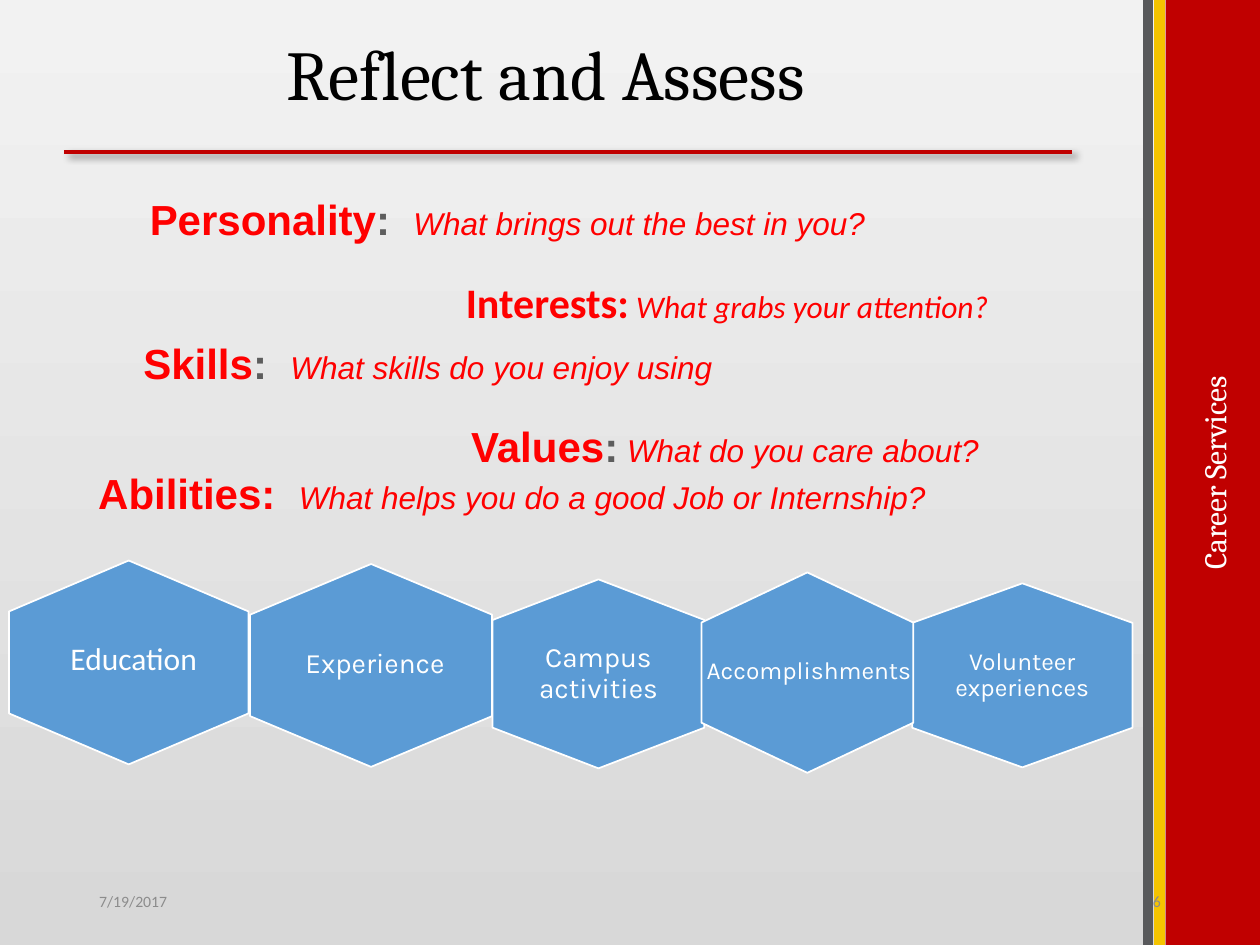
from lxml import etree
from pptx import Presentation
from pptx.dml.color import RGBColor
from pptx.enum.shapes import MSO_CONNECTOR, MSO_SHAPE
from pptx.enum.text import MSO_ANCHOR, MSO_AUTO_SIZE, PP_ALIGN
from pptx.oxml import parse_xml
from pptx.oxml.ns import nsdecls, qn
from pptx.util import Cm, Pt

RECT, HEXAGON = MSO_SHAPE.RECTANGLE, MSO_SHAPE.HEXAGON
STRAIGHT = MSO_CONNECTOR.STRAIGHT
LEFT, CENTER, RIGHT = PP_ALIGN.LEFT, PP_ALIGN.CENTER, PP_ALIGN.RIGHT
TOP, MIDDLE = MSO_ANCHOR.TOP, MSO_ANCHOR.MIDDLE
GROW, FIXED = MSO_AUTO_SIZE.SHAPE_TO_FIT_TEXT, MSO_AUTO_SIZE.NONE

COLORS = {
    "light": "F2F2F2", "shade": "D8D8D8", "crimson": "C00000",
    "gold": "F5C400", "slate": "58595B", "blue": "5B9BD5",
    "white": "FFFFFF", "black": "000000", "red": "FF0000",
    "colon": "5D5D5D", "footer": "8C8C8C",
}
WIDTH, HEIGHT = 25.4, 19.05
SHOULDER = 0.215

QUESTIONS = [
    ((2.77, 3.78, 15.06, 1.27), False, "Arial", "Personality", ":  ", "colon",
     "What brings out the best in you?"),
    ((9.14, 5.44, 11.99, 2.06), True, "Calibri", "Interests", ":", "red",
     "\u00a0What grabs your attention?".replace("\u00a0", " ")),
    ((2.64, 6.68, 12.09, 1.27), False, "Arial", "Skills", ":  ", "colon",
     "What skills do you enjoy using"),
    ((9.25, 8.36, 12.7, 1.27), True, "Arial", "Values", ":", "colon",
     " What do you care about?"),
    ((1.73, 9.3, 17.35, 1.27), False, "Arial", "Abilities", ":  ", "red",
     "What helps you do a good Job or Internship?"),
]
FREE_HEXAGONS = [
    ((18.39, 11.76, 4.44, 3.71), "Volunteer experiences", 14, (0.79, 0.89)),
    ((9.93, 11.68, 4.27, 3.81), "Campus activities", 16, (0.64, 0.74)),
]
TURNED_HEXAGONS = [
    ((14.14, 11.54, 4.27, 4.04), (13.72, 12.01, 5.18, 3.07),
     "Accomplishments", dict(size=14, font="Karla", align=CENTER)),
    ((5.04, 11.37, 4.88, 4.09), (4.92, 12.01, 5.28, 2.77),
     "Experience", dict(size=16, font="Karla", align=CENTER)),
    ((0.18, 11.3, 4.83, 4.11), (1.17, 12.8, 3.2, 1.02),
     "Education", dict(size=18, font="Calibri", align=LEFT)),
]


def rgb(name):
    return RGBColor.from_string(COLORS[name])


def cm(values):
    return [Cm(v) for v in values]


def add_run(p, text, size=18, font="Arial", color="red", bold=False, italic=False):
    r = p.add_run()
    r.text = text
    r.font.size = Pt(size)
    r.font.name = font
    r.font.bold = bold
    r.font.italic = italic
    r.font.color.rgb = rgb(color)


def format_frame(tf, align=LEFT, anchor=TOP, wrap=True, auto=FIXED, spacing=None):
    tf.word_wrap = wrap
    tf.auto_size = auto
    tf.vertical_anchor = anchor
    p = tf.paragraphs[0]
    p.alignment = align
    if spacing:
        p.line_spacing = spacing
    return p


def add_label(s, box, text, align=LEFT, anchor=TOP, auto=FIXED, spacing=None, **style):
    sp = s.shapes.add_textbox(*cm(box))
    add_run(format_frame(sp.text_frame, align, anchor, True, auto, spacing), text, **style)
    return sp


def add_question(s, box, wrap, font, term, colon, colon_color, question):
    sp = s.shapes.add_textbox(*cm(box))
    p = format_frame(sp.text_frame, wrap=wrap, auto=GROW)
    add_run(p, term, size=24, font=font, bold=True)
    add_run(p, colon, size=24, font=font, color=colon_color, bold=True)
    add_run(p, question, font=font, italic=True)


def add_rect(s, box):
    sp = s.shapes.add_shape(RECT, *cm(box))
    sp.shadow.inherit = False
    sp.line.fill.background()
    return sp


def add_rule(s, ends, color, weight, shadow=False):
    line = s.shapes.add_connector(STRAIGHT, *cm(ends))
    line.line.color.rgb = rgb(color)
    line.line.width = Pt(weight)
    effects = etree.SubElement(line._element.spPr, qn("a:effectLst"))
    if shadow:
        effects.append(parse_xml(
            f'<a:outerShdw {nsdecls("a")} blurRad="{Pt(4)}" dist="{Pt(3)}" dir="2700000">'
            f'<a:srgbClr val="{COLORS["black"]}"><a:alpha val="40000"/></a:srgbClr>'
            '</a:outerShdw>'))


def style_hexagon(sp):
    sp.shadow.inherit = False
    sp.fill.solid()
    sp.fill.fore_color.rgb = rgb("blue")
    sp.line.color.rgb = rgb("white")
    sp.line.width = Pt(1)


def add_free_hexagon(s, box, text, size, insets):
    x, y, w, h = box
    upper, lower = y + h * SHOULDER, y + h * (1 - SHOULDER)
    points = [(x + w / 2, y), (x + w, upper), (x + w, lower),
              (x + w / 2, y + h), (x, lower), (x, upper)]
    start, *rest = [cm(point) for point in points]
    builder = s.shapes.build_freeform(*start)
    builder.add_line_segments(rest, close=True)
    sp = builder.convert_to_shape()
    style_hexagon(sp)
    tf = sp.text_frame
    tf.margin_left = tf.margin_right = Cm(insets[0])
    tf.margin_top = tf.margin_bottom = Cm(insets[1])
    p = format_frame(tf, CENTER, MIDDLE, spacing=0.9)
    add_run(p, text, size=size, font="Karla", color="white")


def add_turned_hexagon(s, box, label_box, text, style):
    x, y, w, h = box
    shift = (w - h) / 2
    sp = s.shapes.add_shape(HEXAGON, *cm((x + shift, y - shift, h, w)))
    sp.rotation = 90
    style_hexagon(sp)
    add_label(s, label_box, text, anchor=MIDDLE, spacing=0.9, color="white", **style)


def add_frame(s):
    backdrop = add_rect(s, (0, 0, 23.95, HEIGHT))
    backdrop.fill.gradient()
    backdrop.fill.gradient_angle = 90
    for stop, color in zip(backdrop.fill.gradient_stops, ("shade", "light")):
        stop.color.rgb = rgb(color)
    add_rule(s, (1.3, 3.07, 21.62, 3.07), "crimson", 2.25, shadow=True)
    band = add_rect(s, (23.5, 0, 1.9, HEIGHT))
    band.fill.solid()
    band.fill.fore_color.rgb = rgb("crimson")
    side = add_label(s, (19.46, 9.02, 10.03, 1.02), "Career Services", align=CENTER,
                     auto=GROW, font="Cambria", color="white")
    side.rotation = 270
    for x, color in ((23.37, "gold"), (23.14, "slate")):
        add_rule(s, (x, 0, x, HEIGHT), color, 6)


def main():
    prs = Presentation()
    prs.slide_width, prs.slide_height = cm((WIDTH, HEIGHT))
    s = prs.slides.add_slide(prs.slide_layouts[6])
    s.background.fill.solid()
    s.background.fill.fore_color.rgb = rgb("light")
    add_frame(s)
    title = add_label(s, (1.3, 0.74, 20.4, 1.68), "Reflect and Assess", align=CENTER,
                      anchor=MIDDLE, spacing=0.9, size=40, font="Cambria", color="black")
    title.text_frame.margin_right = Cm(1.25)
    for hexagon in FREE_HEXAGONS:
        add_free_hexagon(s, *hexagon)
    for hexagon in TURNED_HEXAGONS:
        add_turned_hexagon(s, *hexagon)
    for question in QUESTIONS:
        add_question(s, *question)
    footer = dict(anchor=MIDDLE, size=9, font="Calibri", color="footer")
    add_label(s, (1.75, 17.65, 5.72, 1.02), "7/19/2017", **footer)
    add_label(s, (17.93, 17.65, 5.72, 1.02), "6", align=RIGHT, **footer)
    prs.save("out.pptx")


if __name__ == "__main__":
    main()
